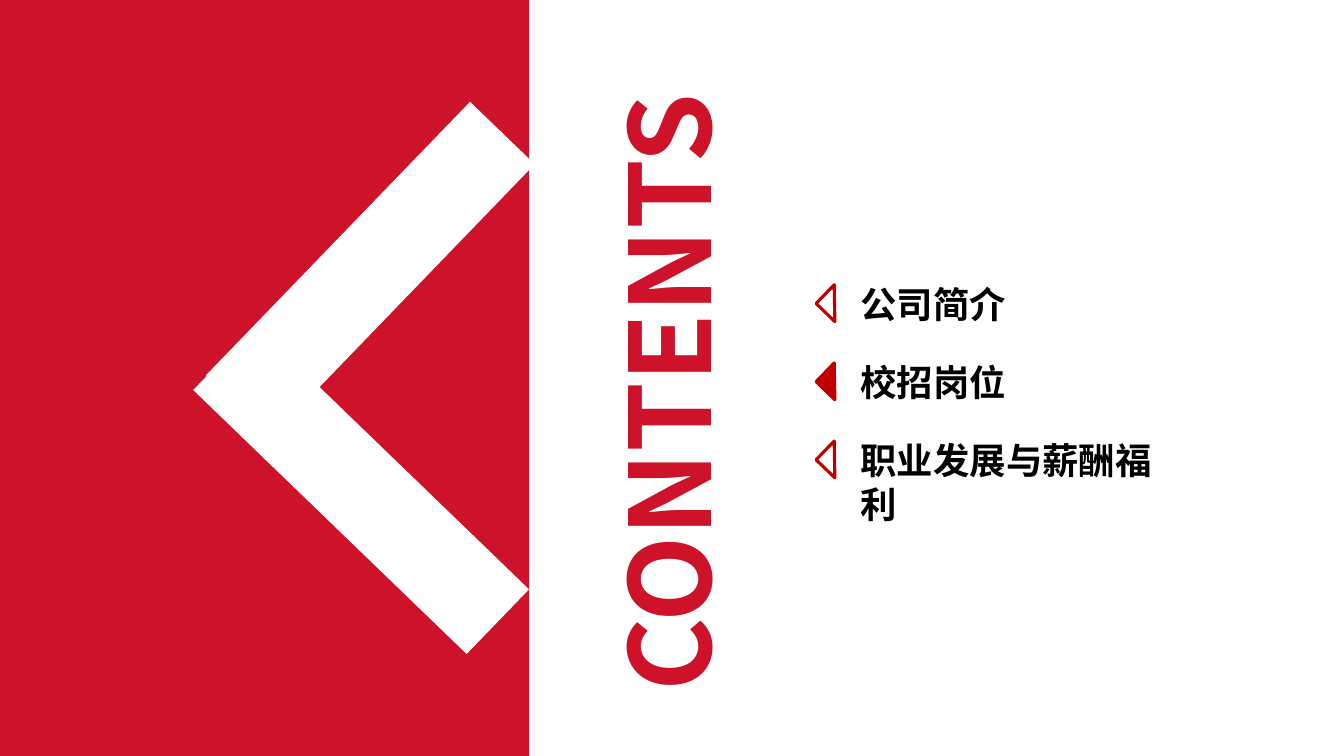
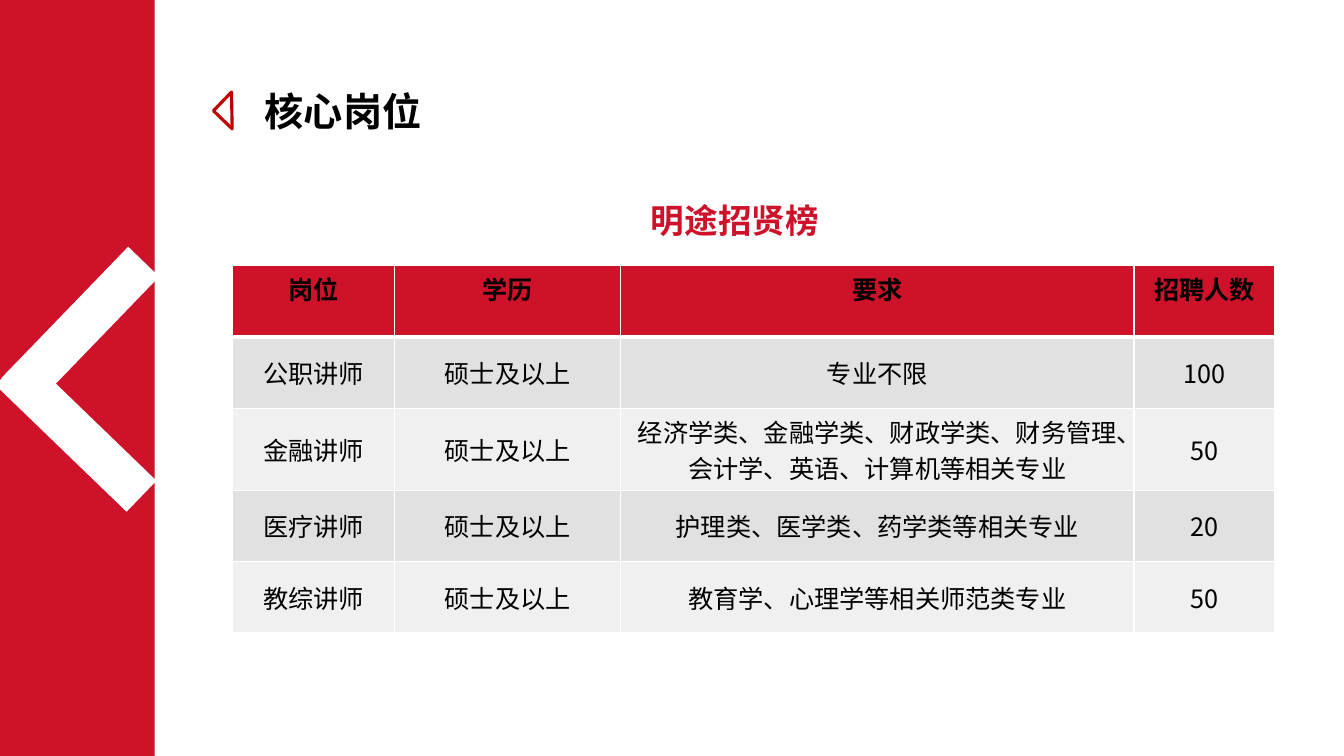
from pptx import Presentation, util as u
from pptx.dml.color import RGBColor
from pptx.enum import lang, shapes, text
from pptx.oxml.ns import qn
from lxml import etree

COLORS = {
    "brand": "CD122A",
    "marker": "C00000",
    "paper": "FFFFFF",
    "ink": "000000",
    "row_dark": "E1E1E1",
    "row_light": "F0F0F0",
}
FONT = "Noto Sans CJK SC"
COLS, ROWS = 32, 18
MODULE = u.Inches(7.5) / ROWS
POINTS = 30


def span(modules):
    """Turn grid modules into a length."""
    return u.Emu(round(modules * MODULE))


def rgb(name):
    """Look up a palette colour."""
    return RGBColor.from_string(COLORS[name])


class Deck:
    """Holds the presentation, its style and the current slide."""

    def __init__(self):
        """Open an empty deck of the grid's size."""
        self.prs = Presentation()
        self.prs.slide_width, self.prs.slide_height = span(COLS), span(ROWS)

    def new_slide(self, band_cols):
        """Start a blank slide with a red band on the left."""
        self.slide = self.prs.slides.add_slide(self.prs.slide_layouts[6])
        self.block(band_cols / 2, ROWS / 2, band_cols, ROWS, "brand")

    def block(self, x, y, width, height, fill, angle=0, line=None,
              kind=shapes.MSO_SHAPE.RECTANGLE):
        """Draw a filled shape centred on a grid point."""
        block = self.slide.shapes.add_shape(
            kind, span(x - width / 2), span(y - height / 2), span(width), span(height))
        block.shadow.inherit = False
        block.rotation = angle
        block.fill.solid()
        block.fill.fore_color.rgb = rgb(fill)
        if line:
            block.line.color.rgb = rgb(line)
            block.line.width = u.Pt(2.25)
        else:
            block.line.fill.background()

    def chevron(self, x, y, scale):
        """Draw the white arrow out of two crossed bars."""
        for side, angle in ((-1, 314), (1, 44)):
            self.block(x - side * 0.11 * scale, y + side * 2.62 * scale,
                       9.05 * scale, 2.14 * scale, "paper", angle)

    def styled_run(self, paragraph, words, size, color="ink", bold=True):
        """Add one styled run to a paragraph."""
        run = paragraph.add_run()
        run.text = words
        run.font.size = u.Pt(size)
        run.font.bold = bold
        run.font.name = FONT
        run.font.language_id = lang.MSO_LANGUAGE_ID.SIMPLIFIED_CHINESE
        run.font.color.rgb = rgb(color)
        properties = run._r.get_or_add_rPr()
        etree.SubElement(properties, qn("a:ea"), typeface=FONT)

    def label(self, x, y, words, size, color="ink", width=None, angle=0):
        """Set one unwrapped line from column x, centred on row y."""
        width = width or len(words) * size / POINTS + 0.48
        height = size * 1.29 / POINTS + 0.24
        box = self.slide.shapes.add_textbox(
            span(x), span(y - height / 2), span(width), span(height))
        box.rotation = angle
        box.text_frame.word_wrap = False
        box.text_frame.auto_size = text.MSO_AUTO_SIZE.SHAPE_TO_FIT_TEXT
        self.styled_run(box.text_frame.paragraphs[0], words, size, color)

    def entry(self, x, y, words, size, gap, current=False):
        """Place a triangle marker and its label."""
        self.block(x, y, 0.62, 0.62, "marker" if current else "paper", 44,
                   "marker", shapes.MSO_SHAPE.RIGHT_TRIANGLE)
        self.label(x + gap, y + 0.05, words, size)

    def borders(self, cell, weights):
        """Draw white lines along the sides of a cell."""
        properties = cell._tc.get_or_add_tcPr()
        for side, weight in zip("LRTB", weights):
            line = etree.SubElement(properties, qn(f"a:ln{side}"), w=str(u.Pt(weight)))
            fill = etree.SubElement(line, qn("a:solidFill"))
            etree.SubElement(fill, qn("a:srgbClr"), val=COLORS["paper"])

    def table(self, x, y, widths, heights, rows):
        """Build a table with a red header and alternating grey rows."""
        table = self.slide.shapes.add_table(
            len(rows), len(widths), span(x), span(y),
            span(sum(widths)), span(sum(heights))).table
        table.first_row = table.horz_banding = False
        for column, width in zip(table.columns, widths):
            column.width = span(width)
        for r, (row, height) in enumerate(zip(rows, heights)):
            table.rows[r].height = span(height)
            header = r == 0
            fill = "brand" if header else ("row_light", "row_dark")[r % 2]
            for c, words in enumerate(row):
                cell = table.cell(r, c)
                self.borders(cell, (1, 1, 3 if r == 1 else 1, 3 if header else 1))
                cell.fill.solid()
                cell.fill.fore_color.rgb = rgb(fill)
                cell.vertical_anchor = (
                    text.MSO_ANCHOR.TOP if header else text.MSO_ANCHOR.MIDDLE)
                paragraph = cell.text_frame.paragraphs[0]
                paragraph.alignment = text.PP_ALIGN.CENTER
                self.styled_run(paragraph, words, 18, bold=header)


def contents(deck):
    """Build the contents slide."""
    deck.new_slide(12.6)
    deck.chevron(8.71, 9.04, 1)
    deck.label(8.3, 9, "CONTENTS", 80, "brand", width=15.41, angle=270)
    for i, chapter in enumerate(("公司简介", "校招岗位", "职业发展与薪酬福利")):
        deck.entry(19.87, 7.22 + 1.86 * i, chapter, 26, 0.38, current=i == 1)


def positions(deck):
    """Build the slide of core positions."""
    degree = "硕士及以上"
    deck.new_slide(3.68)
    deck.chevron(1.86, 9.05, 0.48)
    deck.entry(5.52, 2.63, "核心岗位", 28, 0.55)
    deck.label(15.26, 5.27, "明途招贤榜", 24, "brand")
    deck.table(5.54, 6.32, (3.86, 5.38, 12.22, 3.36), (1.7, 1.7, 1.95, 1.7, 1.7), (
        ("岗位", "学历", "要求", "招聘人数"),
        ("公职讲师", degree, "专业不限", "100"),
        ("金融讲师", degree,
         "经济学类、金融学类、财政学类、财务管理、会计学、英语、计算机等相关专业", "50"),
        ("医疗讲师", degree, "护理类、医学类、药学类等相关专业", "20"),
        ("教综讲师", degree, "教育学、心理学等相关师范类专业", "50"),
    ))


def main():
    """Build and save the deck."""
    deck = Deck()
    contents(deck)
    positions(deck)
    deck.prs.save("out.pptx")


if __name__ == "__main__":
    main()
